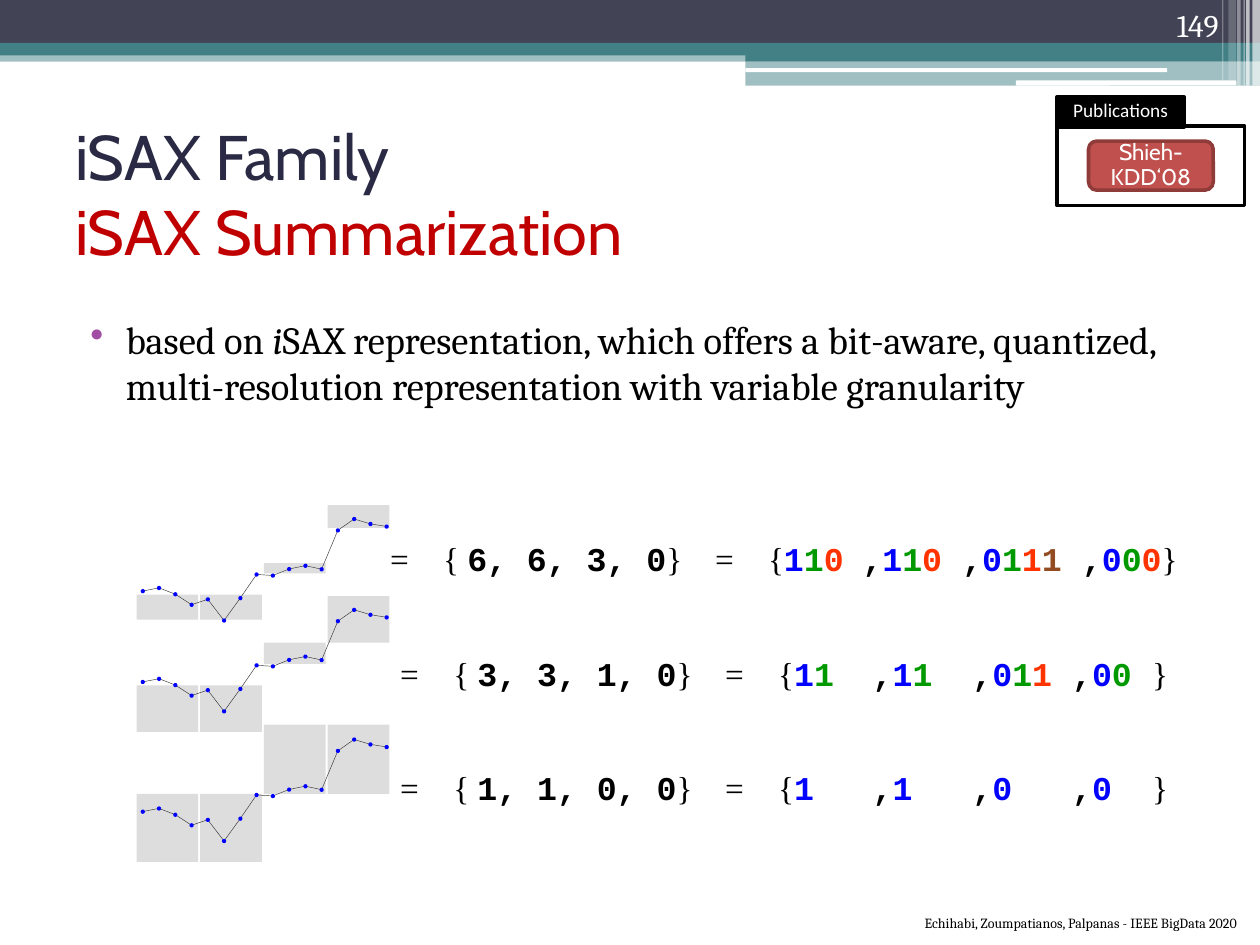
from itertools import accumulate

from lxml import etree
from pptx import Presentation
from pptx.dml.color import RGBColor
from pptx.enum.shapes import MSO_SHAPE
from pptx.enum.text import MSO_ANCHOR, PP_ALIGN
from pptx.oxml.ns import qn
from pptx.util import Pt

RECT, ROUNDED, OVAL = MSO_SHAPE.RECTANGLE, MSO_SHAPE.ROUNDED_RECTANGLE, MSO_SHAPE.OVAL
TOP, MIDDLE, BOTTOM = MSO_ANCHOR.TOP, MSO_ANCHOR.MIDDLE, MSO_ANCHOR.BOTTOM
LEFT, CENTER, RIGHT = PP_ALIGN.LEFT, PP_ALIGN.CENTER, PP_ALIGN.RIGHT

COLORS = {
    "white": "FFFFFF", "black": "000000", "slate": "424456", "teal": "438086",
    "navy": "2A2A45", "crimson": "C00000", "purple": "A04DA3", "band": "DDDDDD",
    "curve": "333333", "blue": "0000FF", "green": "009900", "orange": "FF3300",
    "brown": "934C22", "red": "C0504D", "dark red": "8E3B39",
}
BIT_COLORS = ("blue", "green", "orange", "brown")
CHAR_WIDTH = 11.4
CURVE = (41.2, 39.4, 43, 49, 45.9, 58, 45.2, 31.7,
         32.3, 28.6, 26.7, 28.7, 6.5, 0, 2.8, 4.3)
SERIES = (
    (296.6, ((43.2, 14.4), (43.2, 14.4), (25.2, 5.8), (-7.9, 13))),
    (348.5, ((43.2, 26.6), (43.2, 26.6), (18.7, 12.2), (-7.9, 26.6))),
    (422.6, ((31, 39), (31, 39), (-8.6, 39.6), (-8.6, 39.6))),
)
SETS = (
    (11.2, "6, 6, 3, 0", ("110", "110", "0111", "000"), (4, 5, 6, 0)),
    (17, "3, 3, 1, 0", ("11", "11", "011", "00"), (4, 5, 5, 4)),
    (17, "1, 1, 0, 0", ("1", "1", "0", "0"), (4, 5, 5, 4)),
)


def rgb(name):
    """Return the named colour."""
    return RGBColor.from_string(COLORS[name])


def add_box(shapes, kind, box, fill, alpha=100, line=None):
    """Add a filled preset shape, optionally translucent or outlined."""
    shape = shapes.add_shape(kind, *map(Pt, box))
    shape.shadow.inherit = False
    shape.fill.solid()
    shape.fill.fore_color.rgb = rgb(fill)
    if alpha < 100:
        color = shape.fill._xPr.find(qn("a:solidFill"))[0]
        etree.SubElement(color, qn("a:alpha"), val=str(alpha * 1000))
    if line:
        shape.line.color.rgb = rgb(line)
        shape.line.width = Pt(2)
    else:
        shape.line.fill.background()
    return shape


def add_span(para, text, size, font, color, bold=None, italic=None):
    """Add one formatted run."""
    span = para.add_run()
    span.text = text
    span.font.size, span.font.name = Pt(size), font
    span.font.bold, span.font.italic = bold, italic
    span.font.color.rgb = rgb(color)


def set_frame(frame, anchor, sides=7.2, top=3.6, bottom=3.6):
    """Set wrapping, anchor and insets, and return the first paragraph."""
    frame.word_wrap = True
    frame.vertical_anchor = anchor
    frame.margin_left = frame.margin_right = Pt(sides)
    frame.margin_top, frame.margin_bottom = Pt(top), Pt(bottom)
    return frame.paragraphs[0]


def add_label(page, box, anchor, align, text, size, color):
    """Add a one-line text box."""
    label = page.shapes.add_textbox(*map(Pt, box))
    para = set_frame(label.text_frame, anchor)
    para.alignment = align
    add_span(para, text, size, "Cambria", color)


def draw_header(page, left, top, width):
    """Draw the banner with its accent bars and fading stripes."""
    accent = left + 426
    right = left + width
    bars = (
        (RECT, left, 28.8, width, 6.5, "teal", 50),
        (RECT, left, 0, width, 24.5, "slate", 100),
        (RECT, left, 24.5, width, 7.2, "teal", 100),
        (RECT, accent, 28, right - accent, 7, "teal", 100),
        (RECT, accent, 35, right - accent, 14, "teal", 50),
        (ROUNDED, accent, 39, 241, 2.2, "white", 100),
        (ROUNDED, left + 580.5, 46, 126, 2.9, "white", 100),
    )
    for kind, x, y, wide, high, color, alpha in bars:
        add_box(page.shapes, kind, (x, top + y, wide, high), color, alpha)
    stripes = ((4.3, 4.3, 49, 65), (7.9, 2, 49, 65), (9.4, 0.7, 49, 60),
               (13, 2, 49, 40), (18, 4.3, 46, 20), (21.6, 0.7, 46, 30))
    for inset, wide, high, alpha in stripes:
        add_box(page.shapes, RECT, (right - inset, top, wide, high), "white", alpha)
    add_label(page, (left + 643.7, top, 59.8, 28.8), BOTTOM, RIGHT, "149", 18, "white")


def draw_title(page, box):
    """Write the two-line heading."""
    frame = page.shapes.add_textbox(*map(Pt, box)).text_frame
    para = set_frame(frame, MIDDLE, bottom=47.4)
    add_span(para, "iSAX Family", 36, "Cabin", "navy")
    add_span(frame.add_paragraph(), "iSAX Summarization", 36, "Cabin", "crimson")


def draw_body(page, box):
    """Write the bulleted statement."""
    frame = page.shapes.add_textbox(*map(Pt, box)).text_frame
    para = set_frame(frame, TOP)
    props = para._p.get_or_add_pPr()
    props.set("marL", str(Pt(28.8)))
    props.set("indent", str(Pt(-20.2)))
    bullet_color = etree.SubElement(props, qn("a:buClr"))
    etree.SubElement(bullet_color, qn("a:srgbClr"), val=COLORS["purple"])
    etree.SubElement(props, qn("a:buChar"), char="•")
    add_span(para, "based on ", 22, "Cambria", "black")
    add_span(para, "i", 22, "Cambria", "black", italic=True)
    add_span(para, "SAX representation, which offers a bit-aware, quantized, "
             "multi-resolution representation with variable granularity",
             22, "Cambria", "black")


def write_set(para, start, values, words, widths):
    """Write one symbol set and its coloured bits on tab stops."""
    brace = start + 216
    stops = [start, start + 30.3, start + 185.7, brace]
    stops += [brace + 8.4 + CHAR_WIDTH * count for count in accumulate(widths)]
    tabs = etree.SubElement(para._p.get_or_add_pPr(), qn("a:tabLst"))
    for stop in stops:
        etree.SubElement(tabs, qn("a:tab"), pos=str(Pt(stop)), algn="l")
    para.alignment = LEFT
    add_span(para, "\t=\t{ ", 19, "Times New Roman", "black")
    add_span(para, values, 19, "Courier New", "black", True)
    add_span(para, "}\t=\t{", 19, "Times New Roman", "black")
    for index, word in enumerate(words):
        if index:
            add_span(para, "\t,", 19, "Courier New", "black", True)
        for bit, color in zip(word, BIT_COLORS):
            add_span(para, bit, 19, "Courier New", color, True)
    closing = "\t}" if widths[-1] else "}"
    add_span(para, closing, 19, "Times New Roman", "black")


def draw_sets(page, box):
    """Place the one-cell table of symbol sets."""
    table = page.shapes.add_table(1, 1, *map(Pt, box)).table
    table.first_row = table.horz_banding = False
    cell = table.cell(0, 0)
    cell.fill.background()
    para = set_frame(cell.text_frame, TOP)
    for index, row in enumerate(SETS):
        if index:
            para = cell.text_frame.add_paragraph()
            para.space_before = Pt(43)
        write_set(para, *row)


def draw_series(page, left, top, bands):
    """Draw the time series over its four quantization bands."""
    shapes = page.shapes.add_group_shape().shapes
    for index, (offset, high) in enumerate(bands):
        add_box(shapes, RECT, (left + 36.4 * index, top + offset, 35.3, high), "band")
    points = [(left + 3.6 + 9.29 * index, top + y) for index, y in enumerate(CURVE)]
    path = [(Pt(x), Pt(y)) for x, y in points]
    builder = shapes.build_freeform(*path[0])
    builder.add_line_segments(path[1:], close=False)
    curve = builder.convert_to_shape()
    curve.shadow.inherit = False
    curve.fill.background()
    curve.line.color.rgb = rgb("curve")
    curve.line.width = Pt(0.25)
    for x, y in points:
        add_box(shapes, OVAL, (x - 1.2, y - 1.2, 2.4, 2.4), "blue")


def draw_publications(page, left, top):
    """Draw the publications card with its tab and badge."""
    shapes = page.shapes.add_group_shape().shapes
    add_box(shapes, RECT, (left, top + 16.6, 107.3, 45.4), "white", line="black")
    tab = add_box(shapes, RECT, (left, top, 72.7, 17.3), "black", line="black")
    para = set_frame(tab.text_frame, BOTTOM)
    para.alignment = CENTER
    add_span(para, "Publications", 11, "Calibri", "white")
    badge = add_box(shapes, ROUNDED, (left + 18, top + 25.2, 71.3, 28.1),
                    "red", line="dark red")
    para = set_frame(badge.text_frame, MIDDLE, 0, 0, 0)
    for para, text in ((para, "Shieh-"), (badge.text_frame.add_paragraph(), "KDD‘08")):
        para.alignment = CENTER
        para.line_spacing = 0.9
        add_span(para, text, 13, "Cabin", "white")


def main():
    """Build and save the deck."""
    deck = Presentation()
    deck.slide_width, deck.slide_height = Pt(720), Pt(540)
    page = deck.slides.add_slide(deck.slide_layouts[6])
    draw_header(page, 0, 0, 720)
    draw_title(page, (36, 90, 648, 84.2))
    add_label(page, (455.8, 519, 258.5, 21), TOP, RIGHT,
              "Echihabi, Zoumpatianos, Palpanas - IEEE BigData 2020", 8, "black")
    draw_body(page, (36, 177, 648, 340.6))
    draw_sets(page, (204.5, 306, 486, 168.5))
    for top, bands in reversed(SERIES):
        draw_series(page, 78, top, bands)
    draw_publications(page, 604, 55.4)
    deck.save("out.pptx")


if __name__ == "__main__":
    main()
